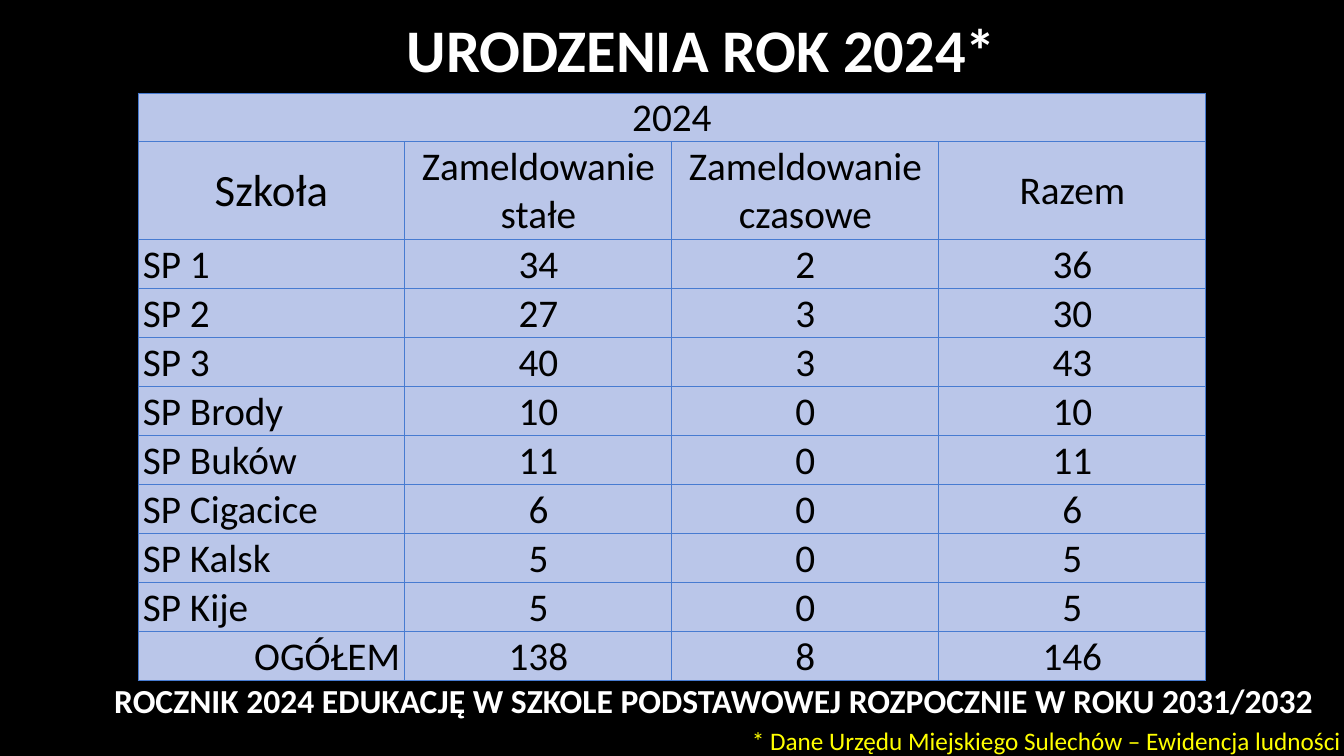
from dataclasses import dataclass

from lxml.etree import SubElement
from pptx import Presentation
from pptx.dml.color import RGBColor
from pptx.enum.text import MSO_ANCHOR, PP_ALIGN
from pptx.oxml.ns import qn
from pptx.util import Pt

EMU_PER_PX = 914400 / 100.8


@dataclass(frozen=True)
class Theme:
    """Colours, font and type sizes of the slide."""
    font: str = "Calibri"
    background: str = "000000"
    heading: str = "FFFFFF"
    note: str = "FFFF00"
    cell_text: str = "000000"
    cell_fill: str = "BAC6E9"
    border: str = "477BD1"
    border_points: float = 0.75
    title_size: float = 43.2
    statement_size: int = 24
    note_size: int = 18
    school_size: int = 32
    cell_size: int = 28


THEME = Theme()
HEADERS = ["Szkoła", "Zameldowanie stałe", "Zameldowanie czasowe", "Razem"]
BIRTHS = [
    ("SP 1", 34, 2, 36),
    ("SP 2", 27, 3, 30),
    ("SP 3", 40, 3, 43),
    ("SP Brody", 10, 0, 10),
    ("SP Buków", 11, 0, 11),
    ("SP Cigacice", 6, 0, 6),
    ("SP Kalsk", 5, 0, 5),
    ("SP Kije", 5, 0, 5),
    ("OGÓŁEM", 138, 8, 146),
]


def px(length):
    """Turn pixels into EMU."""
    return round(length * EMU_PER_PX)


def style_paragraph(paragraph, size, color, align, bold=False):
    """Set the font and alignment of a paragraph."""
    paragraph.alignment = align
    font = paragraph.font
    font.name = THEME.font
    font.size = Pt(size)
    font.bold = bold
    font.color.rgb = RGBColor.from_string(color)


def add_text(slide, box, text, size, color, align, anchor=MSO_ANCHOR.TOP, bold=False, wrap=True):
    """Place one line of text in a box."""
    shape = slide.shapes.add_textbox(*map(px, box))
    frame = shape.text_frame
    frame.word_wrap = wrap
    frame.vertical_anchor = anchor
    frame.text = text
    style_paragraph(frame.paragraphs[0], size, color, align, bold)


def outline_cell(cell):
    """Draw the four borders of a cell, then its fill."""
    properties = cell._tc.get_or_add_tcPr()
    for side in ("a:lnL", "a:lnR", "a:lnT", "a:lnB"):
        line = SubElement(properties, qn(side), w=str(Pt(THEME.border_points)))
        SubElement(SubElement(line, qn("a:solidFill")), qn("a:srgbClr"), val=THEME.border)
    cell.fill.solid()
    cell.fill.fore_color.rgb = RGBColor.from_string(THEME.cell_fill)


def fill_cell(cell, text, align, anchor, size=THEME.cell_size, side_margin=1):
    """Write and style one table cell."""
    cell.margin_left = cell.margin_right = px(side_margin)
    cell.margin_top = cell.margin_bottom = 0
    cell.vertical_anchor = anchor
    cell.text = str(text)
    style_paragraph(cell.text_frame.paragraphs[0], size, THEME.cell_text, align)
    outline_cell(cell)


def add_births_table(slide, box):
    """Build the table of births by school; the header row is two lines tall."""
    left, top, width, height = box
    row_count, column_count = len(BIRTHS) + 2, len(HEADERS)
    table = slide.shapes.add_table(row_count, column_count, *map(px, box)).table
    table.first_row = table.horz_banding = False
    for column in table.columns:
        column.width = px(width / column_count)
    row_height = height // (row_count + 1)
    for row in table.rows:
        row.height = px(row_height)
    table.rows[1].height = px(height - row_height * (row_count - 1))

    for column in range(column_count):
        fill_cell(table.cell(0, column), "" if column else "2024", PP_ALIGN.CENTER, MSO_ANCHOR.BOTTOM)
    table.cell(0, 0).merge(table.cell(0, column_count - 1))
    for column, header in enumerate(HEADERS):
        size = THEME.cell_size if column else THEME.school_size
        fill_cell(table.cell(1, column), header, PP_ALIGN.CENTER, MSO_ANCHOR.MIDDLE, size)
    for row, (school, *counts) in enumerate(BIRTHS, start=2):
        align = PP_ALIGN.RIGHT if row == row_count - 1 else PP_ALIGN.LEFT
        fill_cell(table.cell(row, 0), school, align, MSO_ANCHOR.BOTTOM, side_margin=5)
        for column, count in enumerate(counts, start=1):
            fill_cell(table.cell(row, column), count, PP_ALIGN.CENTER, MSO_ANCHOR.BOTTOM)


def build_births_slide(presentation):
    """Add the slide with its title, table, statement and source note."""
    slide = presentation.slides.add_slide(presentation.slide_layouts[6])
    background = slide.background.fill
    background.solid()
    background.fore_color.rgb = RGBColor.from_string(THEME.background)
    add_text(slide, (217, 0, 969, 90), "URODZENIA ROK 2024*", THEME.title_size,
             THEME.heading, PP_ALIGN.CENTER, MSO_ANCHOR.BOTTOM, bold=True)
    add_text(slide, (41, 675, 1282, 55),
             "ROCZNIK 2024 EDUKACJĘ W SZKOLE PODSTAWOWEJ ROZPOCZNIE W ROKU 2031/2032",
             THEME.statement_size, THEME.heading, PP_ALIGN.RIGHT, bold=True)
    add_births_table(slide, (138, 93, 1068, 588))
    add_text(slide, (742, 720, 612, 40), "* Dane Urzędu Miejskiego Sulechów – Ewidencja ludności",
             THEME.note_size, THEME.note, PP_ALIGN.LEFT, wrap=False)


def main():
    """Build and save the presentation."""
    presentation = Presentation()
    presentation.slide_width, presentation.slide_height = px(1344), px(756)
    build_births_slide(presentation)
    presentation.save("out.pptx")


if __name__ == "__main__":
    main()
